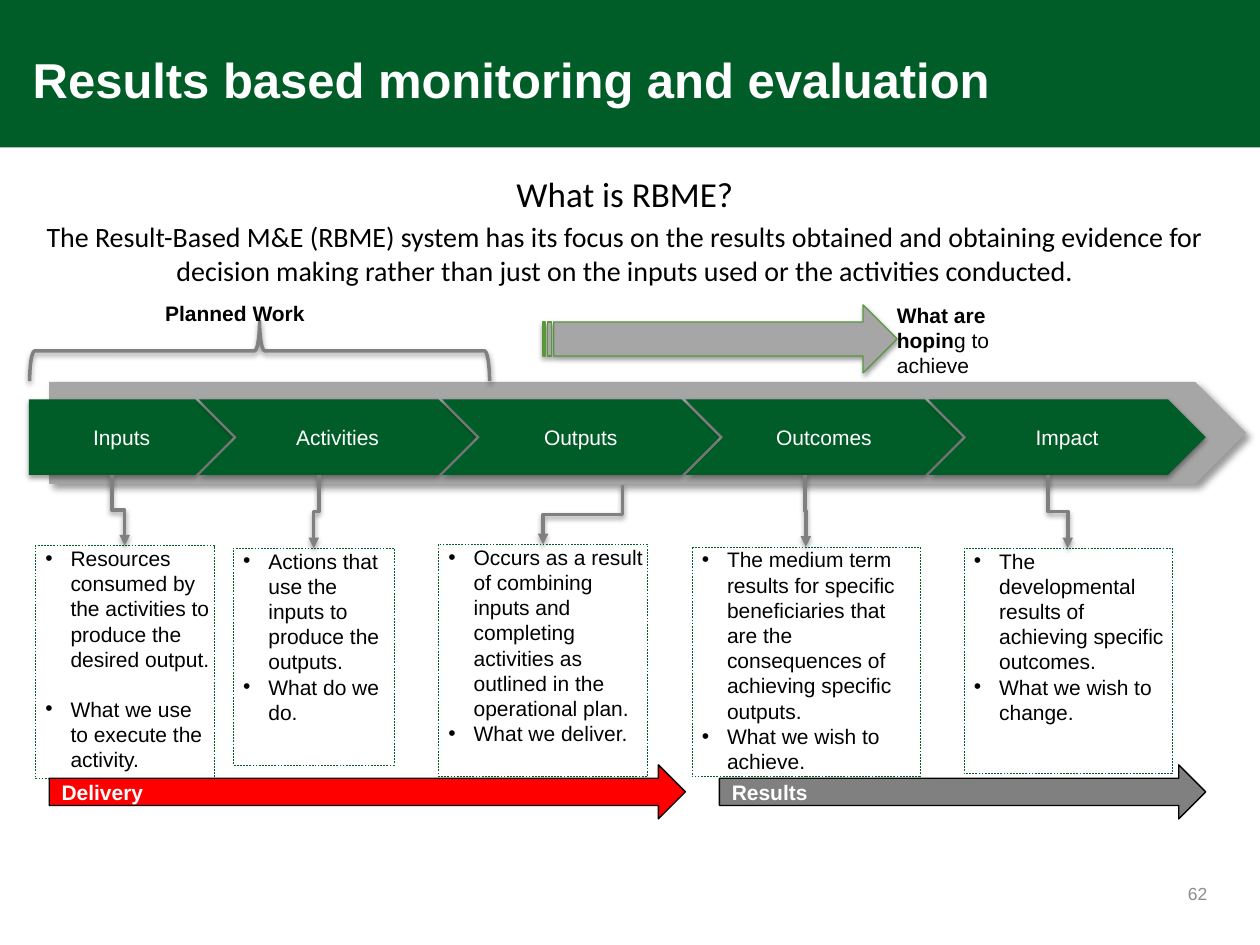
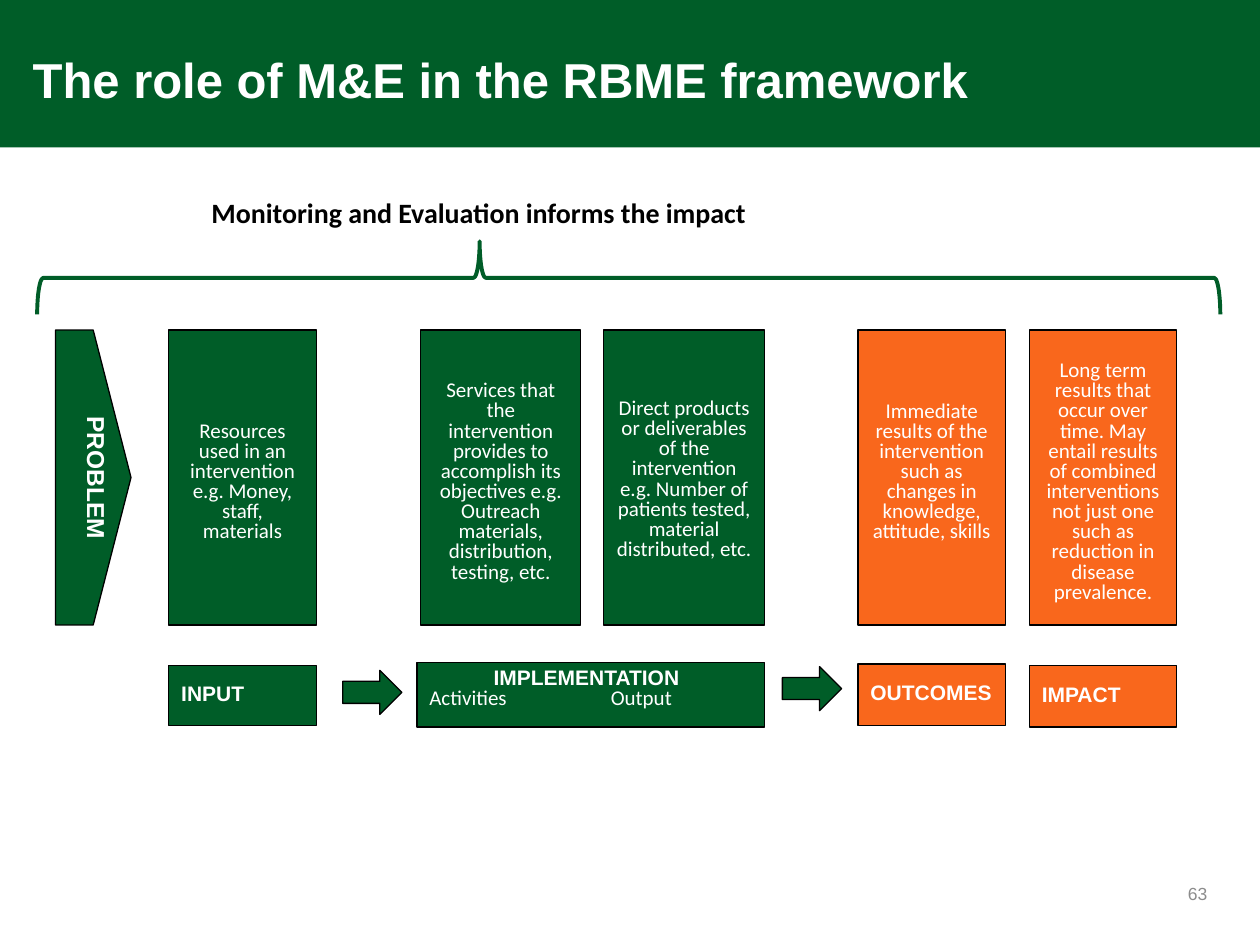
from lxml.etree import SubElement
from pptx import Presentation
from pptx.dml.color import RGBColor
from pptx.enum.dml import MSO_LINE
from pptx.enum.shapes import MSO_CONNECTOR, MSO_SHAPE
from pptx.enum.text import MSO_ANCHOR, PP_ALIGN
from pptx.oxml.ns import qn
from pptx.util import Inches, Pt

RECT, PLATE, CHEVRON = MSO_SHAPE.RECTANGLE, MSO_SHAPE.PENTAGON, MSO_SHAPE.CHEVRON
ARROW, STRIPED = MSO_SHAPE.RIGHT_ARROW, MSO_SHAPE.STRIPED_RIGHT_ARROW
LBRACE, RBRACE = MSO_SHAPE.LEFT_BRACE, MSO_SHAPE.RIGHT_BRACE
LEFT, CENTER, RIGHT = PP_ALIGN.LEFT, PP_ALIGN.CENTER, PP_ALIGN.RIGHT
TOP, MIDDLE = MSO_ANCHOR.TOP, MSO_ANCHOR.MIDDLE
ELBOW, DASH = MSO_CONNECTOR.ELBOW, MSO_LINE.DASH

GREEN, ORANGE, RED = "005D28", "F9671C", "FF0000"
BLACK, WHITE, GRAY, SILVER = "000000", "FFFFFF", "808080", "A6A6A6"
SOFT = dict(alpha=38, blur=3.1, dist=1.6, angle=90)
DEEP = dict(alpha=40, blur=4, dist=3, angle=45)
INSET = (0.1, 0.05, 0.1, 0.05)
TIGHT = (0.08, 0, 0.01, 0)


def rgb(code):
    """Turn a hex string into a colour."""
    return RGBColor.from_string(code)


def look(size, color, name="Arial", bold=False):
    """Gather the format values of a run."""
    return dict(size=Pt(size), color=color, name=name, bold=bold)


def add_run(para, text, style):
    """Add one formatted run to a paragraph."""
    run = para.add_run()
    run.text = text
    for key, value in style.items():
        if key == "color":
            run.font.color.rgb = rgb(value)
        else:
            setattr(run.font, key, value)


def add_para(frame, text, style, align=LEFT, space=None):
    """Fill the empty first paragraph or add a further one."""
    para = frame.paragraphs[0]
    if para.runs:
        para = frame.add_paragraph()
    para.alignment = align
    para.line_spacing = space
    add_run(para, text, style)
    return para


def set_frame(shape, anchor=TOP, inset=INSET):
    """Set wrapping, anchor and insets, and return the text frame."""
    frame = shape.text_frame
    sides = ("left", "top", "right", "bottom")
    values = {f"margin_{side}": Inches(gap) for side, gap in zip(sides, inset)}
    values.update(word_wrap=True, vertical_anchor=anchor)
    for key, value in values.items():
        setattr(frame, key, value)
    return frame


def set_shade(item, shade=None):
    """Replace the theme shadow by the given one or by none."""
    effects = SubElement(item.element.spPr, qn("a:effectLst"))
    if shade:
        outer = SubElement(effects, qn("a:outerShdw"), rotWithShape="0",
                           blurRad=str(Pt(shade["blur"])), dist=str(Pt(shade["dist"])),
                           dir=str(shade["angle"] * 60000))
        color = SubElement(outer, qn("a:srgbClr"), val=BLACK)
        SubElement(color, qn("a:alpha"), val=str(shade["alpha"] * 1000))


def add_box(slide, kind, at, fill=None, line=None, width=0.75, shade=None):
    """Add a preset shape with its fill, line and shadow."""
    shape = slide.shapes.add_shape(kind, *map(Inches, at))
    if fill:
        shape.fill.solid()
        shape.fill.fore_color.rgb = rgb(fill)
    else:
        shape.fill.background()
    if line:
        shape.line.color.rgb = rgb(line)
        shape.line.width = Pt(width)
    else:
        shape.line.fill.background()
    set_shade(shape, shade)
    return shape


def add_text(slide, at, anchor=TOP):
    """Add a text box and return its frame."""
    return set_frame(slide.shapes.add_textbox(*map(Inches, at)), anchor)


def add_elbow(slide, x, y, end_x, end_y):
    """Add a bent arrow that leaves and arrives going down."""
    half, side = (end_y - y) / 2, abs(end_x - x) / 2
    mid_x, mid_y = (x + end_x) / 2, (y + end_y) / 2
    turn = 1 if end_x > x else -1
    ends = (mid_x + turn * half, mid_y - side, mid_x - turn * half, mid_y + side)
    link = slide.shapes.add_connector(ELBOW, *map(Inches, ends))
    link.element.spPr.xfrm.rot = 270 if turn > 0 else 90
    link.line.color.rgb = rgb(GRAY)
    link.line.width = Pt(2)
    SubElement(link.line._get_or_add_ln(), qn("a:tailEnd"), type="triangle")
    set_shade(link, SOFT)


def add_points(slide, at, points, gap=0):
    """Add a dashed box with bulleted points."""
    box = add_box(slide, RECT, at, line=GREEN, width=0.25)
    box.line.dash_style = DASH
    frame = set_frame(box, inset=TIGHT)
    for text in points:
        para = add_para(frame, text, look(12, BLACK))
        props = para._p.get_or_add_pPr()
        props.set("marL", str(Inches(0.2)))
        props.set("indent", str(Inches(-0.2)))
        SubElement(props, qn("a:buFont"), typeface="Arial")
        SubElement(props, qn("a:buChar"), char="•")
    if gap:
        para.space_before = Pt(gap)


def add_label(slide, kind, at, fill, text, anchor=TOP):
    """Add an outlined shape with a bold label."""
    frame = set_frame(add_box(slide, kind, at, fill, BLACK), anchor)
    add_para(frame, text, look(12, WHITE, bold=True), space=0.8)


def add_page(deck, title, number):
    """Add a slide with the green band, title and page number."""
    slide = deck.slides.add_slide(deck.slide_layouts[5])
    band = add_box(slide, RECT, (0, 0, 10, 1.17), GREEN)
    head = slide.shapes.title
    band.element.addnext(head.element)
    place = dict(left=0.16, top=0, width=8.65, height=1.25)
    for key, value in place.items():
        setattr(head, key, Inches(value))
    add_para(set_frame(head, MIDDLE), title, look(28, WHITE, bold=True))
    frame = add_text(slide, (9.06, 6.89, 0.62, 0.4), MIDDLE)
    add_para(frame, str(number), look(10, "8C8C8C"), RIGHT)
    return slide


def add_chain(slide):
    """Add the row of stages on its grey arrow."""
    add_box(slide, PLATE, (0.39, 3.03, 9.5, 0.81), SILVER, shade=DEEP)
    stages = [(PLATE, 0.23, 1.62, "Inputs")]
    names = ("Activities", "Outputs", "Outcomes", "Impact")
    stages += [(CHEVRON, 1.58 + 1.93 * i, 2.2, name) for i, name in enumerate(names)]
    for kind, left, width, name in stages:
        box = add_box(slide, kind, (left, 3.17, width, 0.6), GREEN, shade=SOFT)
        add_para(set_frame(box, MIDDLE), name, look(12, WHITE), CENTER)


def add_results(deck):
    """Build the slide on the results chain."""
    slide = add_page(deck, "Results based monitoring and evaluation", 62)
    frame = add_text(slide, (0.16, 1.32, 9.6, 0.91))
    add_para(frame, "What is RBME?", look(20, BLACK, "Calibri"), CENTER)
    para = add_para(
        frame, "The Result-Based M&E (RBME) system has its focus on the results obtained "
        "and obtaining evidence for decision making rather than just on the inputs used "
        "or the activities conducted.", look(16, BLACK, "Calibri"), CENTER)
    para.space_before = Pt(3)
    add_chain(slide)

    notes = [
        ((0.28, 4.33, 1.42, 1.85), 0.89, 3.77, 14,
         ("Resources consumed by the activities to produce the desired output.",
          "What we use to execute the activity.")),
        ((1.85, 4.35, 1.28, 1.72), 2.53, 3.77, 0,
         ("Actions that use the inputs to produce the outputs.", "What do we do.")),
        ((3.48, 4.32, 1.66, 1.84), 4.94, 3.85, 0,
         ("Occurs as a result of combining inputs and completing activities as outlined "
          "in the operational plan.", "What we deliver.")),
        ((5.49, 4.34, 1.81, 1.82), 6.39, 3.77, 0,
         ("The medium term results for specific beneficiaries that are the consequences "
          "of achieving specific outputs.", "What we wish to achieve.")),
        ((7.65, 4.35, 1.65, 1.79), 8.32, 3.77, 0,
         ("The developmental results of achieving specific outcomes.",
          "What we wish to change.")),
    ]
    for at, x, y, gap, points in notes:
        add_points(slide, at, points, gap)
        add_elbow(slide, x, y, at[0] + at[2] / 2, at[1])

    brace = add_box(slide, LBRACE, (1.82, 0.96, 0.48, 3.65), None, GRAY, 2, SOFT)
    brace.rotation = 90
    bold = look(12, BLACK, bold=True)
    add_para(add_text(slide, (0.97, 2.34, 1.79, 0.26)), "Planned Work", bold, CENTER)
    add_box(slide, STRIPED, (4.31, 2.42, 2.81, 0.54), SILVER, "5A963C", shade=SOFT)
    para = add_para(add_text(slide, (7.02, 2.35, 1.3, 0.59)), "What are hopin", bold)
    add_run(para, "g to achieve", look(12, BLACK))
    add_label(slide, ARROW, (0.39, 6.07, 5.05, 0.43), RED, "Delivery")
    add_label(slide, ARROW, (5.71, 6.07, 3.86, 0.43), GRAY, "Results")


def add_role(deck):
    """Build the slide on the role of M&E."""
    slide = add_page(deck, "The role of M&E in the RBME framework", 63)
    plate = add_box(slide, PLATE, (0.44, 2.62, 0.6, 2.34), GREEN, BLACK)
    frame = set_frame(plate, inset=(0.1, 0.1, 0.1, 0.05))
    frame._txBody.bodyPr.set("vert", "vert")
    add_para(frame, "PROBLEM", look(14, WHITE, bold=True), CENTER, 0.8)

    cards = [
        (1.34, 1.17, GREEN, 0.73,
         "Resources used in an intervention e.g. Money, staff, materials"),
        (3.34, 1.27, GREEN, 0.41,
         "Services that the intervention provides to accomplish its objectives e.g. "
         "Outreach materials, distribution, testing, etc."),
        (4.79, 1.28, GREEN, 0.55,
         "Direct products or deliverables of the intervention e.g. Number of patients "
         "tested, material distributed, etc."),
        (6.81, 1.17, ORANGE, 0.57,
         "Immediate results of the intervention such as changes in knowledge, "
         "attitude, skills"),
        (8.17, 1.17, ORANGE, 0.25,
         "Long term results that occur over time. May entail results of combined "
         "interventions not just one such as reduction in disease prevalence."),
    ]
    plain = look(12, WHITE, "Calibri")
    for left, width, fill, drop, text in cards:
        box = add_box(slide, RECT, (left, 2.62, width, 2.34), fill, BLACK)
        frame = set_frame(box, inset=(0.1, drop, 0.1, 0.05))
        add_para(frame, text, plain, CENTER, 0.8)

    tags = [(1.34, 5.28, 0.48, GREEN, "INPUT"), (6.81, 5.27, 0.49, ORANGE, "OUTCOMES"),
            (8.17, 5.28, 0.49, ORANGE, "IMPACT")]
    for left, top, height, fill, text in tags:
        add_label(slide, RECT, (left, top, 1.17, height), fill, text, MIDDLE)
    frame = set_frame(add_box(slide, RECT, (3.31, 5.26, 2.76, 0.51), GREEN, BLACK))
    para = add_para(frame, "IMPLEMENTATION", look(12, WHITE, bold=True), space=0.8)
    para._p.get_or_add_pPr().set("marL", str(Inches(0.51)))
    para = add_para(frame, "Activities\tOutput", plain, space=0.8)
    tabs = SubElement(para._p.get_or_add_pPr(), qn("a:tabLst"))
    SubElement(tabs, qn("a:tab"), pos=str(Inches(1.44)), algn="l")
    for left, top in ((2.72, 5.32), (6.21, 5.29)):
        add_box(slide, ARROW, (left, top, 0.47, 0.35), GREEN, BLACK)

    brace = add_box(slide, RBRACE, (4.7, -2.49, 0.58, 9.39), None, GREEN, 2.25)
    brace.rotation = 270
    brace.adjustments[1] = 0.374
    add_para(add_text(slide, (1.58, 1.5, 5.09, 0.37)),
             "Monitoring and Evaluation informs the impact",
             look(16, BLACK, "Calibri", True))


def main():
    """Build and save the deck."""
    deck = Presentation()
    deck.slide_width, deck.slide_height = Inches(10), Inches(7.5)
    add_results(deck)
    add_role(deck)
    deck.save("out.pptx")


if __name__ == "__main__":
    main()
